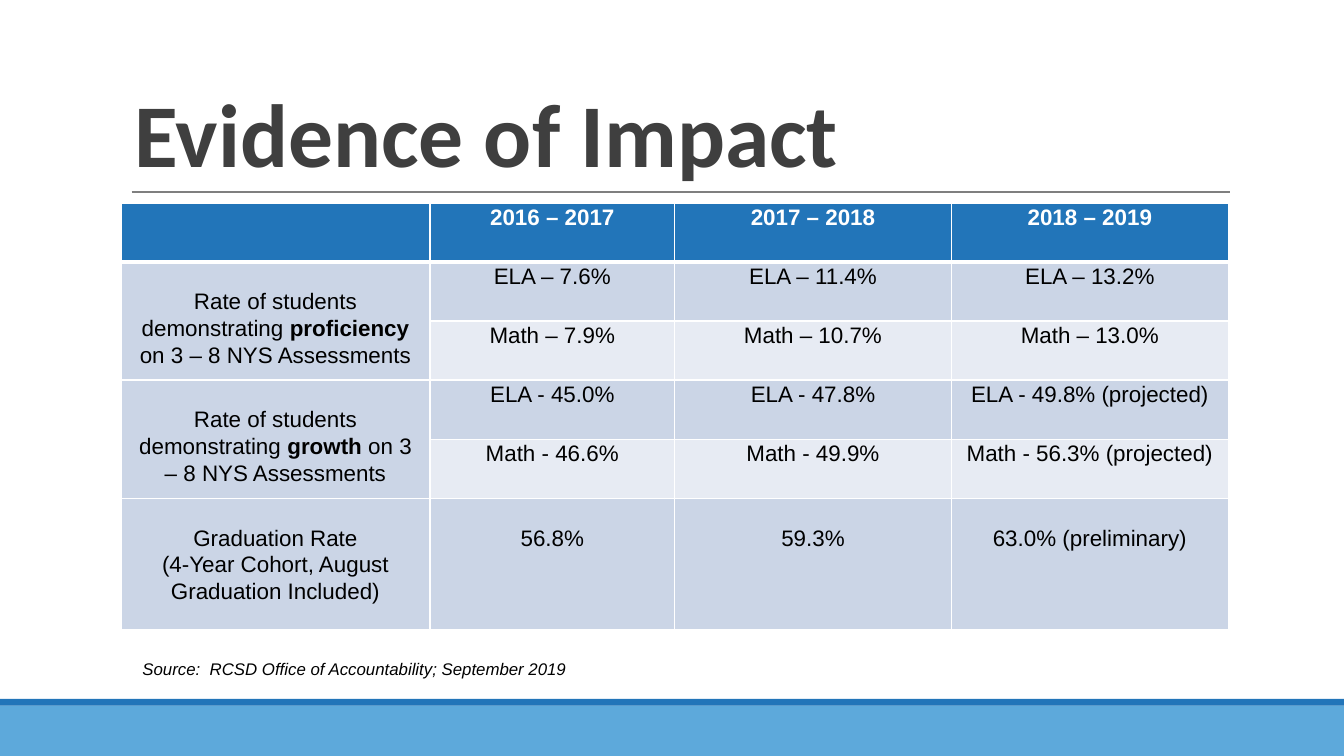
from dataclasses import dataclass

from lxml import etree
from pptx import Presentation
from pptx import util as u
from pptx.dml.color import RGBColor
from pptx.enum import shapes, text
from pptx.oxml import ns


@dataclass(frozen=True)
class Theme:
    heading_font: str = "Calibri"
    body_font: str = "Arial"
    title_size: int = 48
    table_size: int = 12
    source_size: int = 9
    title: str = "3F3F3F"
    rule: str = "7F7F7F"
    body: str = "000000"
    white: str = "FFFFFF"
    dark_blue: str = "2275B9"
    light_blue: str = "5DA9DB"
    band_dark: str = "CBD5E6"
    band_light: str = "E7EBF3"


THEME = Theme()
SLIDE_WIDTH = 10
SLIDE_HEIGHT = SLIDE_WIDTH * 9 / 16
FOOTER_TOP = 5.25
LABEL_COLUMN = 0
COLUMNS = [2.3, 1.82, 2.06, 2.06]
ROWS = [0.44] * 5 + [0.98]
LINE_DROP = 0.19
HEADER = ["", "2016 – 2017", "2017 – 2018", "2018 – 2019"]
RESULTS = [
    ["Rate of students demonstrating *proficiency* on 3 – 8 NYS Assessments",
     "ELA – 7.6%", "ELA – 11.4%", "ELA – 13.2%"],
    ["", "Math – 7.9%", "Math – 10.7%", "Math – 13.0%"],
    ["Rate of students demonstrating *growth* on 3 – 8 NYS Assessments",
     "ELA - 45.0%", "ELA - 47.8%", "ELA - 49.8% (projected)"],
    ["", "Math - 46.6%", "Math - 49.9%", "Math - 56.3% (projected)"],
    ["Graduation Rate\n(4-Year Cohort, August Graduation Included)",
     "56.8%", "59.3%", "63.0% (preliminary)"],
]


def rgb(value):
    return RGBColor.from_string(value)


def style_font(font, name, size, color, bold=False, italic=False):
    font.name = name
    font.size = u.Pt(size)
    font.color.rgb = rgb(color)
    font.bold = bold
    font.italic = italic


def add_title(slide, wording):
    title = slide.shapes.title
    title.left, title.top = u.Inches(0.9), u.Inches(0.24)
    title.width, title.height = u.Inches(8.25), u.Inches(1.19)
    frame = title.text_frame
    frame.text = wording
    frame.word_wrap = True
    frame.auto_size = text.MSO_AUTO_SIZE.NONE
    frame.vertical_anchor = text.MSO_ANCHOR.BOTTOM
    paragraph = frame.paragraphs[0]
    paragraph.alignment = text.PP_ALIGN.LEFT
    paragraph.line_spacing = 0.85
    style_font(paragraph.runs[0].font, THEME.heading_font, THEME.title_size,
               THEME.title, bold=True)


def add_band(slide, top, height, color):
    band = slide.shapes.add_shape(
        shapes.MSO_SHAPE.RECTANGLE, 0, u.Inches(top),
        u.Inches(SLIDE_WIDTH), u.Inches(height))
    band.shadow.inherit = False
    band.fill.solid()
    band.fill.fore_color.rgb = rgb(color)
    band.line.fill.background()


def add_rule(slide):
    rule = slide.shapes.add_connector(
        shapes.MSO_CONNECTOR.STRAIGHT, u.Inches(0.98), u.Inches(1.43),
        u.Inches(9.15), u.Inches(1.43))
    rule.line.color.rgb = rgb(THEME.rule)
    rule.line.width = u.Pt(0.75)
    etree.SubElement(rule._element.spPr, ns.qn("a:effectLst"))


def set_borders(cell, top=1, bottom=1):
    properties = cell._tc.get_or_add_tcPr()
    for side, points in (("L", 1), ("R", 1), ("T", top), ("B", bottom)):
        border = etree.SubElement(properties, ns.qn(f"a:ln{side}"),
                                  w=str(u.Pt(points)))
        fill = etree.SubElement(border, ns.qn("a:solidFill"))
        etree.SubElement(fill, ns.qn("a:srgbClr"), val=THEME.white)


def paint_cell(cell, color):
    cell.fill.solid()
    cell.fill.fore_color.rgb = rgb(color)


def write_cell(cell, wording, color, bold=False, drop=0):
    cell.margin_left = cell.margin_right = u.Inches(0.07)
    cell.margin_top, cell.margin_bottom = u.Inches(drop), 0
    frame = cell.text_frame
    for index, line in enumerate(wording.split("\n")):
        paragraph = frame.add_paragraph() if index else frame.paragraphs[0]
        paragraph.alignment = text.PP_ALIGN.CENTER
        paragraph.line_spacing = 1.07
        paragraph.font.size = u.Pt(THEME.table_size)
        for part, words in enumerate(line.split("*")):
            if words:
                run = paragraph.add_run()
                run.text = words
                style_font(run.font, THEME.body_font, THEME.table_size, color,
                           bold=bold or part % 2 == 1)


def add_plain_table(slide, left, top, columns, rows):
    table = slide.shapes.add_table(
        len(rows), len(columns), u.Inches(left), u.Inches(top),
        u.Inches(sum(columns)), u.Inches(sum(rows))).table
    table.first_row = table.horz_banding = False
    for column, width in zip(table.columns, columns):
        column.width = u.Inches(width)
    for row, height in zip(table.rows, rows):
        row.height = u.Inches(height)
    return table


def add_results(slide):
    table = add_plain_table(slide, 0.9, 1.51, COLUMNS, ROWS)
    for column, year in enumerate(HEADER):
        cell = table.cell(0, column)
        set_borders(cell, bottom=3)
        paint_cell(cell, THEME.dark_blue)
        write_cell(cell, year, THEME.white, bold=True)
    for row, values in enumerate(RESULTS, start=1):
        for column, value in enumerate(values):
            cell = table.cell(row, column)
            is_label = column == LABEL_COLUMN
            set_borders(cell, top=3 if row == 1 else 1)
            paint_cell(cell, THEME.band_dark if is_label or row % 2
                       else THEME.band_light)
            dropped = is_label or row == len(RESULTS)
            write_cell(cell, value, THEME.body,
                       drop=LINE_DROP if dropped else 0)
    for row in (1, 3):
        table.cell(row, LABEL_COLUMN).merge(table.cell(row + 1, LABEL_COLUMN))


def add_source(slide, wording):
    cell = add_plain_table(slide, 0.96, 4.86, [6.21], [0.27]).cell(0, 0)
    set_borders(cell, bottom=3)
    paint_cell(cell, THEME.white)
    cell.text_frame.text = wording
    style_font(cell.text_frame.paragraphs[0].runs[0].font, THEME.body_font,
               THEME.source_size, THEME.body, italic=True)


def main():
    deck = Presentation()
    deck.slide_width = u.Inches(SLIDE_WIDTH)
    deck.slide_height = u.Inches(SLIDE_HEIGHT)
    slide = deck.slides.add_slide(deck.slide_layouts[5])
    add_band(slide, FOOTER_TOP, SLIDE_HEIGHT - FOOTER_TOP, THEME.light_blue)
    add_band(slide, 5.2, 0.05, THEME.dark_blue)
    add_rule(slide)
    add_title(slide, "Evidence of Impact")
    add_results(slide)
    add_source(slide, "Source:  RCSD Office of Accountability; September 2019")
    deck.save("out.pptx")


if __name__ == "__main__":
    main()
